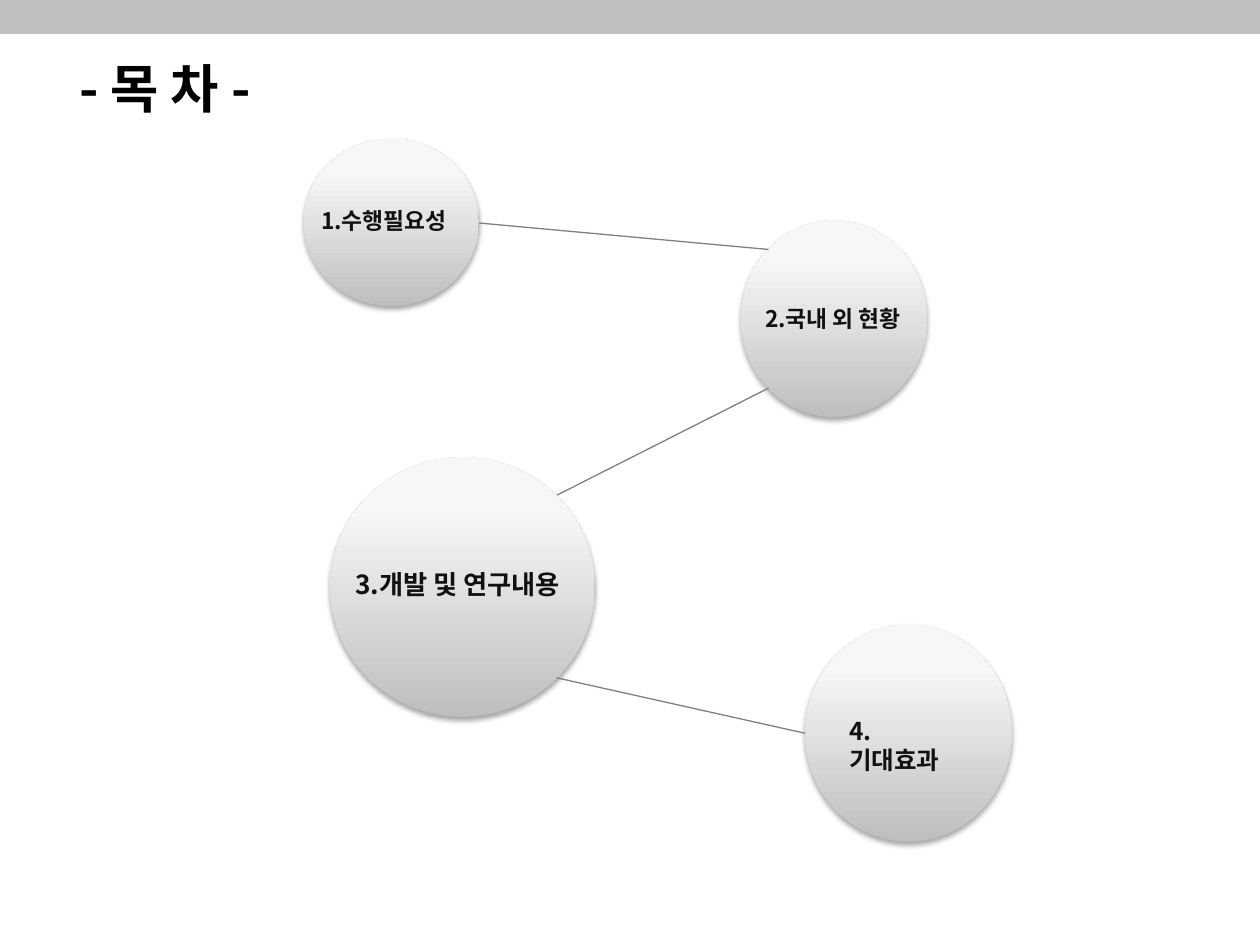
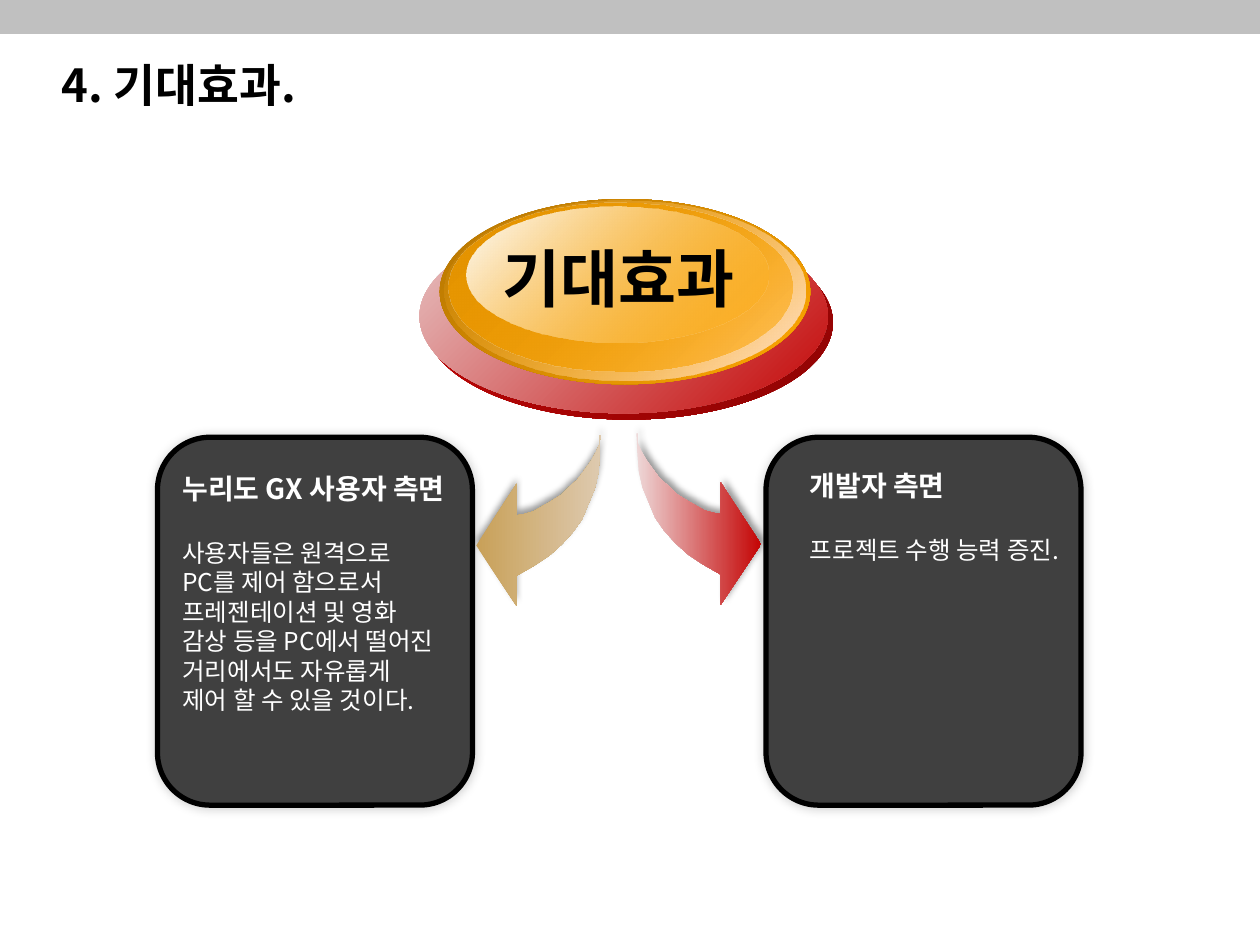
"""Build a table-of-contents slide and an expected-effects slide."""
import pptx
import pptx.dml.color
import pptx.enum.shapes
import pptx.enum.text
import pptx.oxml
import pptx.oxml.ns
import pptx.util
from dataclasses import dataclass

Inches = pptx.util.Inches
Pt = pptx.util.Pt
Color = pptx.dml.color.RGBColor.from_string
Shape = pptx.enum.shapes.MSO_SHAPE
Align = pptx.enum.text.PP_ALIGN
qn = pptx.oxml.ns.qn
NAMESPACE = pptx.oxml.ns.nsdecls("a")


@dataclass(frozen=True)
class Theme:
    font: str = "Noto Sans CJK KR"
    band: str = "C0C0C0"
    black: str = "000000"
    white: str = "FFFFFF"
    label: str = "111111"
    link: str = "808080"
    panel: str = "404040"
    bubble: tuple = ((0, "BEBEBE", 100), (80, "F7F7F7", 100), (100, "F8F8F8", 100))
    gold_arrow: tuple = ((0, "C8A058", 100), (100, "DECAAF", 100))
    red_arrow: tuple = ((0, "EED8D8", 100), (100, "C40505", 100))
    contents_size: int = 30
    title_size: int = 26
    badge_size: int = 36
    heading_size: int = 16
    body_size: int = 14


theme = Theme()


def paint(shape, fill, angle=0, shadow=None):
    """Fill with a colour or gradient stops, and add an optional shadow."""
    shape.shadow.inherit = False
    shape.line.fill.background()
    properties = shape._element.spPr
    if isinstance(fill, str):
        shape.fill.solid()
        shape.fill.fore_color.rgb = Color(fill)
    else:
        stops = "".join(
            f'<a:gs pos="{position * 1000}"><a:srgbClr val="{color}">'
            f'<a:alpha val="{opacity * 1000}"/></a:srgbClr></a:gs>'
            for position, color, opacity in fill)
        shape.fill.gradient()
        properties.replace(properties.find(qn("a:gradFill")), pptx.oxml.parse_xml(
            f'<a:gradFill {NAMESPACE} rotWithShape="1"><a:gsLst>{stops}</a:gsLst>'
            f'<a:lin ang="{angle * 60000}" scaled="0"/></a:gradFill>'))
    if shadow:
        opacity, blur, distance, direction = shadow
        properties.find(qn("a:effectLst")).append(pptx.oxml.parse_xml(
            f'<a:outerShdw {NAMESPACE} blurRad="{Pt(blur)}" dist="{Pt(distance)}" '
            f'dir="{direction * 60000}" algn="ctr" rotWithShape="0">'
            f'<a:srgbClr val="{theme.black}"><a:alpha val="{opacity * 1000}"/>'
            f'</a:srgbClr></a:outerShdw>'))


def write(frame, lines, color, align=Align.LEFT):
    """Write (text, size, bold, space before) lines into a text frame."""
    frame.word_wrap = True
    frame.auto_size = pptx.enum.text.MSO_AUTO_SIZE.NONE
    frame.vertical_anchor = pptx.enum.text.MSO_ANCHOR.TOP
    for index, (text, size, bold, gap) in enumerate(lines):
        para = frame.add_paragraph() if index else frame.paragraphs[0]
        para.text = text
        para.alignment = align
        if gap:
            para.space_before = Pt(gap)
        para.font.size = Pt(size)
        para.font.bold = bold
        para.font.color.rgb = Color(color)
        para.font.name = theme.font
        para._p.pPr.find(qn("a:defRPr")).append(pptx.oxml.parse_xml(
            f'<a:ea {NAMESPACE} typeface="{theme.font}"/>'))


deck = pptx.Presentation()
deck.slide_width = Inches(10)
deck.slide_height = Inches(7.5)

pages = []
for heading, size, indent in (("- 목 차 -", theme.contents_size, 0.3),
                              ("4. 기대효과.", theme.title_size, 0.16)):
    page = deck.slides.add_slide(deck.slide_layouts[5])
    title = page.shapes.title
    title.left, title.top = Inches(0.33), Inches(0.45)
    title.width, title.height = Inches(9.32), Inches(0.71)
    write(title.text_frame, [(heading, size, True, 0)], theme.black)
    title.text_frame.margin_left = Inches(indent)
    title.text_frame.margin_right = 0
    title.text_frame.paragraphs[0].line_spacing = 0.9
    pages.append(page)
contents, effects = pages

band = contents.shapes.add_shape(Shape.RECTANGLE, 0, 0, deck.slide_width, Inches(0.27))
paint(band, theme.band)
deck.slide_master.shapes._spTree.insert(2, band._element)

bubbles = (
    ((2.41, 1.1, 1.39, 1.33), "1.수행필요성", 13, (2.45, 1.59, 1.4), Align.LEFT),
    ((5.88, 1.75, 1.48, 1.56), "2.국내 외 현황", 13, (5.86, 2.37, 1.5), Align.CENTER),
    ((2.62, 3.63, 2.1, 2.06), "3.개발 및 연구내용", 15, (2.72, 4.46, 2.1), Align.LEFT),
    ((6.39, 4.96, 1.64, 1.72), "4.기대효과", 14, (6.64, 5.63, 1), Align.LEFT),
)
for bounds, text, size, (left, top, width), align in bubbles:
    bubble = contents.shapes.add_shape(Shape.OVAL, *map(Inches, bounds))
    paint(bubble, theme.bubble, 270, (35, 3.1, 1.8, 90))
    label = contents.shapes.add_textbox(*map(Inches, (left, top, width, 0.34)))
    write(label.text_frame, [(text, size, True, 0)], theme.label, align)

for ends in ((3.8, 1.77, 6.1, 1.98), (6.1, 3.08, 4.42, 3.93), (4.42, 5.38, 6.39, 5.82)):
    link = contents.shapes.add_connector(
        pptx.enum.shapes.MSO_CONNECTOR.STRAIGHT, *map(Inches, ends))
    link.line.color.rgb = Color(theme.link)
    link.line.width = Pt(0.75)
    link._element.spPr.append(pptx.oxml.parse_xml(f"<a:effectLst {NAMESPACE}/>"))

user_lines = ("사용자들은 원격으로", "PC를 제어 함으로서", "프레젠테이션 및 영화",
              "감상 등을 PC에서 떨어진", "거리에서도 자유롭게", "제어 할 수 있을 것이다.")
panels = (
    (1.25, (1.35, 3.69, 2.6, 2.52), "누리도 GX 사용자 측면", user_lines),
    (6.08, (6.33, 3.67, 2.4, 1.35), "개발자 측면", ("프로젝트 수행 능력 증진.",)),
)
for left, text_bounds, heading, body in panels:
    panel = effects.shapes.add_shape(
        Shape.ROUNDED_RECTANGLE, Inches(left), Inches(3.47), Inches(2.5), Inches(2.92))
    panel.adjustments[0] = 0.167
    paint(panel, theme.panel, shadow=(20, 6, 0, 315))
    panel.line.color.rgb = Color(theme.black)
    panel.line.width = Pt(3)
    box = effects.shapes.add_textbox(*map(Inches, text_bounds))
    lines = [(heading, theme.heading_size, True, 0)]
    lines += [(text, theme.body_size, False, 0 if index else 19)
              for index, text in enumerate(body)]
    write(box.text_frame, lines, theme.white)

arrow_points = (
    (4.77, 3.45), (4.76, 3.61), (4.75, 3.75), (4.72, 3.88), (4.67, 4), (4.62, 4.12),
    (4.55, 4.22), (4.46, 4.32), (4.36, 4.41), (4.24, 4.49), (4.1, 4.57), (4.1, 4.81),
    (3.78, 4.33), (4.1, 3.84), (4.1, 4.09), (4.16, 4.08), (4.23, 4.06), (4.3, 4.02),
    (4.37, 3.98), (4.45, 3.93), (4.51, 3.87), (4.58, 3.81), (4.64, 3.73), (4.69, 3.66),
    (4.73, 3.59), (4.76, 3.52), (4.76, 3.45),
)
mirrored_points = [(9.82 - x, y - 0.01) for x, y in arrow_points]
for points, stops, direction in ((arrow_points, theme.gold_arrow, 270),
                                 (mirrored_points, theme.red_arrow, 315)):
    corners = [(Inches(x), Inches(y)) for x, y in points]
    outline = effects.shapes.build_freeform(*corners[0])
    outline.add_line_segments(corners[1:], close=True)
    paint(outline.convert_to_shape(), stops, 0, (40, 4, 3, direction))

badge_layers = (
    ((3.37, 1.79, 3.24, 1.54), ("C40505", 100), ("8F0404", 100)),
    ((3.33, 1.74, 3.24, 1.54), ("E7C6C6", 100), ("C40505", 100)),
    ((3.49, 1.58, 2.94, 1.47), ("B67601", 100), ("FEA501", 100)),
    ((3.53, 1.59, 2.86, 1.43), ("FEA501", 0), ("FFE5D4", 100)),
    ((3.56, 1.61, 2.73, 1.34), ("E69501", 100), ("FEA501", 48)),
    ((3.7, 1.64, 2.4, 1.08), ("FFFFFF", 100), ("FEA501", 38)),
)
for bounds, start, end in badge_layers:
    layer = effects.shapes.add_shape(Shape.OVAL, *map(Inches, bounds))
    paint(layer, ((0, *start), (100, *end)), 45)
badge = effects.shapes.add_textbox(*map(Inches, (3.71, 1.85, 2.4, 0.71)))
write(badge.text_frame, [("기대효과", theme.badge_size, True, 0)], theme.black, Align.CENTER)

deck.save("out.pptx")
